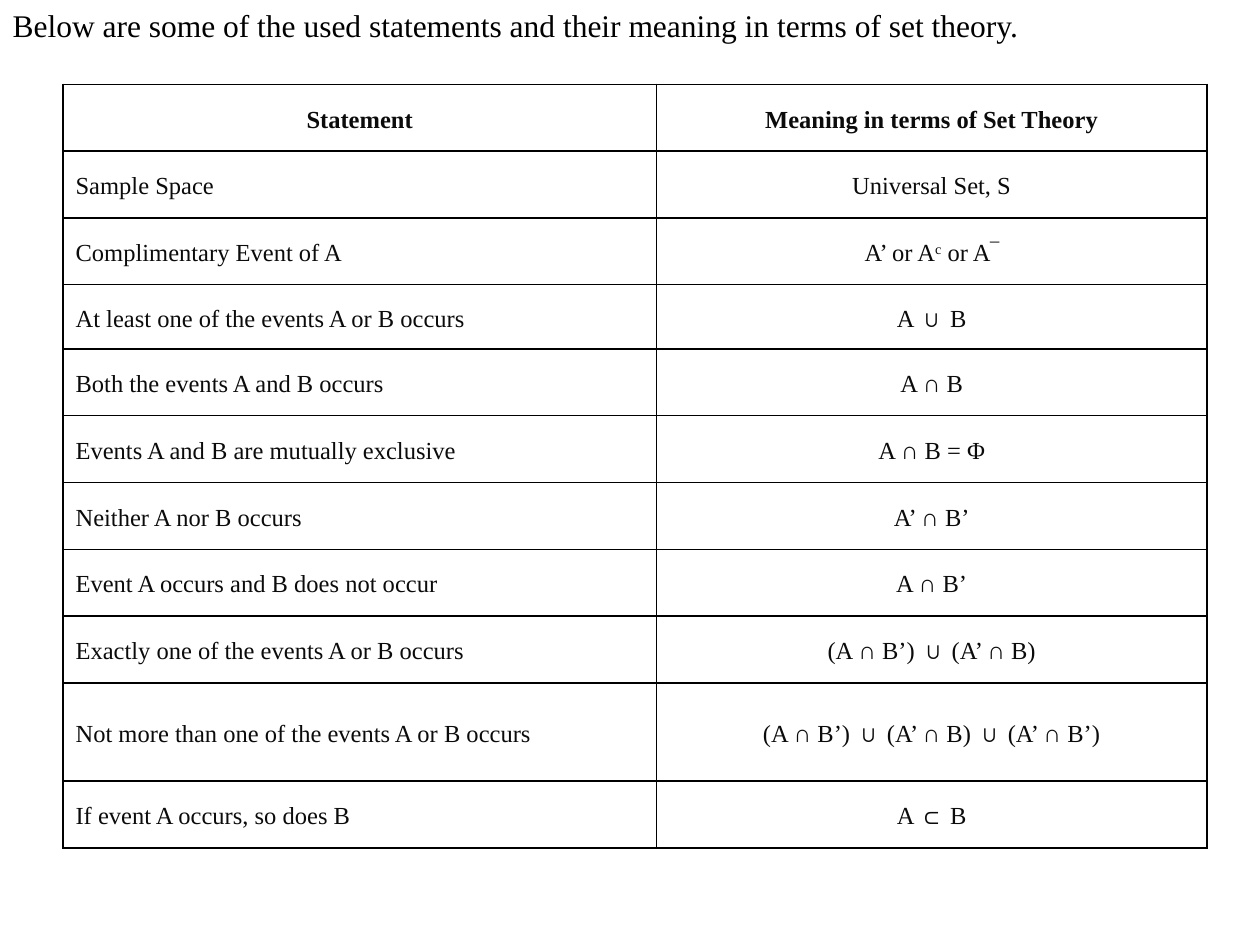
from pptx import Presentation
from pptx.dml.color import RGBColor
from pptx.enum.text import MSO_ANCHOR, PP_ALIGN
from pptx.oxml import parse_xml
from pptx.oxml.ns import nsdecls
from pptx.util import Inches, Pt

BLACK = RGBColor(0x00, 0x00, 0x00)
INK = RGBColor(0x0B, 0x0B, 0x0B)
WHITE = RGBColor(0xFF, 0xFF, 0xFF)
FONT = "Times New Roman"

# Text between carets is raised.
ROWS = [
    ("Statement", "Meaning in terms of Set Theory"),
    ("Sample Space", "Universal Set, S"),
    ("Complimentary Event of A", "A’ or A^c^ or A‾"),
    ("At least one of the events A or B occurs", "A ∪ B"),
    ("Both the events A and B occurs", "A ∩ B"),
    ("Events A and B are mutually exclusive", "A ∩ B = Φ"),
    ("Neither A nor B occurs", "A’ ∩ B’"),
    ("Event A occurs and B does not occur", "A ∩ B’"),
    ("Exactly one of the events A or B occurs", "(A ∩ B’) ∪ (A’ ∩ B)"),
    ("Not more than one of the events A or B occurs",
     "(A ∩ B’) ∪ (A’ ∩ B) ∪ (A’ ∩ B’)"),
    ("If event A occurs, so does B", "A ⊂ B"),
]
COL_WIDTHS = [4.71, 4.37]
ROW_HEIGHT = 0.53
SPECIAL_HEIGHTS = {3: 0.51, 9: 0.78}


def style_run(r, size, color, bold=False):
    for name, value in {"name": FONT, "size": Pt(size), "bold": bold}.items():
        setattr(r.font, name, value)
    r.font.color.rgb = color


def add_borders(cell):
    """Draw a thin black line on all four sides of the cell."""
    tcPr = cell._tc.get_or_add_tcPr()
    for i, side in enumerate(("lnL", "lnR", "lnT", "lnB")):
        tcPr.insert(i, parse_xml(
            f'<a:{side} {nsdecls("a")} w="{Pt(1)}"><a:solidFill>'
            f'<a:srgbClr val="{BLACK}"/></a:solidFill></a:{side}>'))


prs = Presentation()
prs.slide_width, prs.slide_height = Inches(10), Inches(7.5)
s = prs.slides.add_slide(prs.slide_layouts[1])
title = s.shapes.title
title.element.getparent().remove(title.element)

# Introductory sentence
body = s.placeholders[1]
box = {"left": 0, "top": 0, "width": 10, "height": 7.5}
for name, value in box.items():
    setattr(body, name, Inches(value))
p = body.text_frame.paragraphs[0]
pPr = p._p.get_or_add_pPr()
pPr.set("marL", str(Inches(0.38)))
pPr.set("indent", str(Inches(-0.38)))
pPr.append(parse_xml(f'<a:buNone {nsdecls("a")}/>'))
r = p.add_run()
r.text = "Below are some of the used statements and their meaning in terms of set theory."
style_run(r, 18, BLACK)

# Table of statements and set notation
heights = [SPECIAL_HEIGHTS.get(i, ROW_HEIGHT) for i in range(len(ROWS))]
table = s.shapes.add_table(
    len(ROWS), len(COL_WIDTHS), Inches(0.5), Inches(0.67),
    Inches(sum(COL_WIDTHS)), Inches(sum(heights))).table
for col, width in zip(table.columns, COL_WIDTHS):
    col.width = Inches(width)

cell_format = {"vertical_anchor": MSO_ANCHOR.MIDDLE}
for side in ("left", "right", "top", "bottom"):
    cell_format[f"margin_{side}"] = Inches(0.1)

for i, (texts, height) in enumerate(zip(ROWS, heights)):
    table.rows[i].height = Inches(height)
    for j, text in enumerate(texts):
        cell = table.cell(i, j)
        for name, value in cell_format.items():
            setattr(cell, name, value)
        cell.fill.solid()
        cell.fill.fore_color.rgb = WHITE
        add_borders(cell)

        p = cell.text_frame.paragraphs[0]
        p.alignment = PP_ALIGN.CENTER if i == 0 or j == 1 else PP_ALIGN.LEFT
        p.line_spacing = 1.15
        p.space_after = Pt(22.5)
        for k, part in enumerate(text.split("^")):
            r = p.add_run()
            r.text = part
            style_run(r, 14, INK, bold=i == 0)
            if k % 2:
                r.font._element.set("baseline", "30000")

prs.save("out.pptx")
